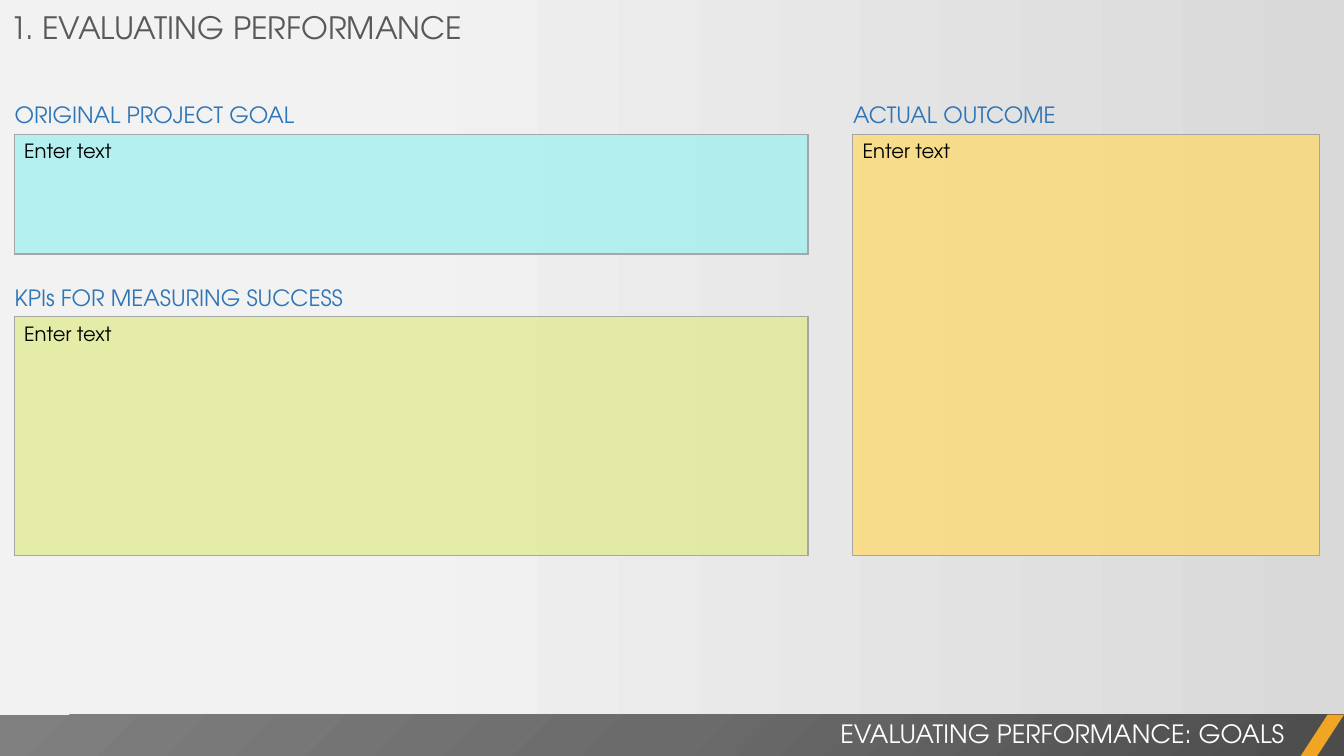
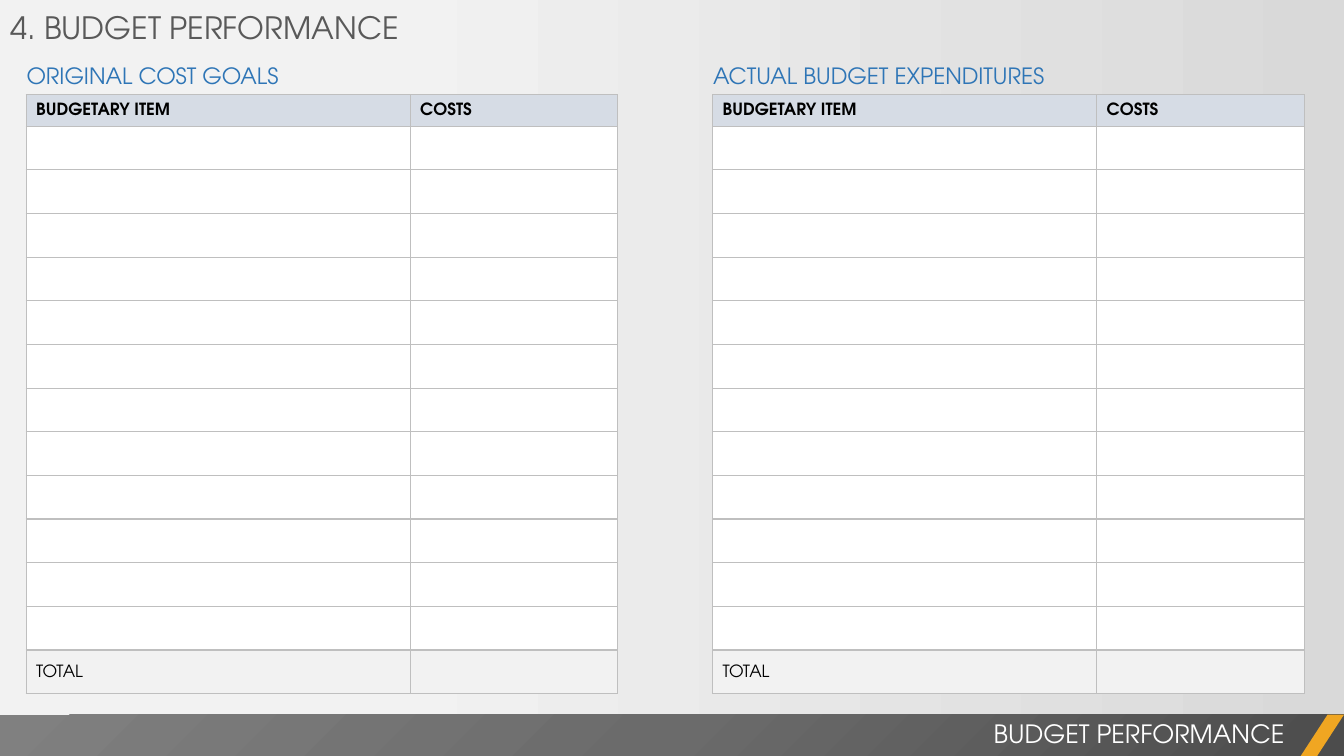
from dataclasses import dataclass

from pptx import Presentation, oxml, util as u
from pptx.dml.color import RGBColor
from pptx.enum import shapes, text
from pptx.oxml import ns
from pptx.util import Cm, Pt


@dataclass(frozen=True)
class Theme:
    font: str = "TeX Gyre Adventor"
    title: str = "595959"
    label: str = "2E75B6"
    body: str = "000000"
    footer: str = "FFFFFF"
    accent: str = "F0A622"
    background: tuple = ((0.28, "F2F2F2"), (1, "D9D9D9"))
    band: tuple = ((0, "4C4C4C"), (50, "6B6B6B"), (100, "808080"))
    panel_border: str = "A6A6A6"
    grid_border: str = "BFBFBF"
    header_row: str = "D6DCE5"
    item_row: str = "FFFFFF"
    total_row: str = "F2F2F2"
    title_size: int = 22
    footer_size: int = 18
    label_size: int = 16
    panel_size: int = 14
    grid_size: int = 12


@dataclass(frozen=True)
class Panel:
    """A labelled one-cell table; lengths in centimetres."""
    label: str
    left: float
    top: float
    width: float
    height: float
    fill: str


@dataclass(frozen=True)
class Budget:
    label: str
    left: float


THEME = Theme()
SLIDE_WIDTH, SLIDE_HEIGHT = Cm(33.87), Cm(19.05)
BAND_TOP = Cm(18.01)
PANEL_OPACITY = 70

PANELS = (
    Panel("ORIGINAL PROJECT GOAL", 0.36, 3.38, 20, 3.02, "9CF0F0"),
    Panel("KPIs FOR MEASURING SUCCESS", 0.36, 7.98, 20, 6.02, "E0EA88"),
    Panel("ACTUAL OUTCOME", 21.49, 3.38, 11.76, 10.62, "FFD966"),
)

BUDGETS = (
    Budget("ORIGINAL COST GOALS", 0.66),
    Budget("ACTUAL BUDGET EXPENDITURES", 17.96),
)
BUDGET_TOP = 2.39
BUDGET_COLUMNS = (9.68, 5.23)
HEADER_HEIGHT, ITEM_HEIGHT, ITEM_COUNT = 0.79, 1.1, 12


def rgb(colour: str) -> RGBColor:
    return RGBColor.from_string(colour)


def write(frame, words: str, size: int, colour: str, bold: bool = False):
    """Fill a text frame with one formatted paragraph and return it."""
    frame.text = words
    paragraph = frame.paragraphs[0]
    for run in paragraph.runs:
        font = run.font
        font.name, font.size, font.bold = THEME.font, Pt(size), bold
        font.color.rgb = rgb(colour)
    return paragraph


def set_background(master) -> None:
    fill = master.background.fill
    fill.gradient()
    fill.gradient_angle = 0
    for stop, (position, colour) in zip(fill.gradient_stops, THEME.background):
        stop.position = position
        stop.color.rgb = rgb(colour)


def add_plain_shape(slide, kind, left: u.Length, width: u.Length):
    """Add a shape without line or shadow that stands on the footer band."""
    shape = slide.shapes.add_shape(kind, left, BAND_TOP, width, SLIDE_HEIGHT - BAND_TOP)
    shape.shadow.inherit = False
    shape.line.fill.background()
    return shape


def add_footer(slide, words: str) -> None:
    band = add_plain_shape(slide, shapes.MSO_SHAPE.RECTANGLE, Cm(0), SLIDE_WIDTH)
    band.fill.gradient()
    stops = "".join(
        f'<a:gs pos="{position * 1000}"><a:srgbClr val="{colour}"/></a:gs>'
        for position, colour in THEME.band
    )
    radial = oxml.parse_xml(
        f'<a:gradFill {ns.nsdecls("a")}><a:gsLst>{stops}</a:gsLst>'
        '<a:path path="circle"><a:fillToRect l="100000" t="100000"/></a:path></a:gradFill>'
    )
    properties = band._element.spPr
    properties.replace(properties.find(ns.qn("a:gradFill")), radial)

    slash_width = Cm(1.09)
    slash = add_plain_shape(
        slide, shapes.MSO_SHAPE.PARALLELOGRAM, SLIDE_WIDTH - slash_width, slash_width
    )
    slash.adjustments[0] = 0.65
    slash.fill.solid()
    slash.fill.fore_color.rgb = rgb(THEME.accent)

    box = slide.shapes.add_textbox(Cm(1.02), Cm(17.98), Cm(31.6), Cm(1.02))
    box.text_frame.word_wrap = True
    paragraph = write(box.text_frame, words, THEME.footer_size, THEME.footer)
    paragraph.alignment = text.PP_ALIGN.RIGHT


def add_slide(presentation, title_words: str, footer_words: str):
    """Add a title-only slide with the shared title style and footer."""
    slide = presentation.slides.add_slide(presentation.slide_layouts[5])
    title = slide.shapes.title
    title.left, title.top, title.width, title.height = Cm(0), Cm(0.1), Cm(20), Cm(1.19)
    frame = title.text_frame
    frame.auto_size = text.MSO_AUTO_SIZE.NONE
    frame.vertical_anchor = text.MSO_ANCHOR.TOP
    paragraph = write(frame, title_words, THEME.title_size, THEME.title)
    paragraph.alignment = text.PP_ALIGN.LEFT
    add_footer(slide, footer_words)
    return slide


def add_label(slide, words: str, left: float, table_top: float) -> None:
    """Write a heading just above a table, in line with its left edge."""
    box = slide.shapes.add_textbox(Cm(left - 0.29), Cm(table_top - 1.06), Cm(14.2), Cm(1.02))
    frame = box.text_frame
    frame.word_wrap = True
    frame.margin_left = frame.margin_right = Cm(0.3)
    frame.margin_top = frame.margin_bottom = Cm(0.15)
    paragraph = write(frame, words, THEME.label_size, THEME.label)
    paragraph.line_spacing = Pt(21.5)


def add_table(slide, left: float, top: float, columns: tuple, rows: tuple):
    """Add an unbanded table from column widths and row heights."""
    table = slide.shapes.add_table(
        len(rows), len(columns), Cm(left), Cm(top), Cm(sum(columns)), Cm(sum(rows))
    ).table
    table.first_row = table.horz_banding = False
    for column, width in zip(table.columns, columns):
        column.width = Cm(width)
    for row, height in zip(table.rows, rows):
        row.height = Cm(height)
    return table


def style_cell(cell, fill: str, border: str, opacity: int = 100) -> None:
    properties = cell._tc.get_or_add_tcPr()
    for side in "LRTB":
        properties.append(oxml.parse_xml(
            f'<a:ln{side} {ns.nsdecls("a")} w="{Pt(1)}"><a:solidFill>'
            f'<a:srgbClr val="{border}"/></a:solidFill></a:ln{side}>'
        ))
    cell.fill.solid()
    cell.fill.fore_color.rgb = rgb(fill)
    if opacity < 100:
        colour = properties.find(f'{ns.qn("a:solidFill")}/{ns.qn("a:srgbClr")}')
        colour.append(oxml.parse_xml(
            f'<a:alpha {ns.nsdecls("a")} val="{opacity * 1000}"/>'
        ))


def add_panel(slide, panel: Panel) -> None:
    table = add_table(slide, panel.left, panel.top, (panel.width,), (panel.height,))
    cell = table.cell(0, 0)
    cell.margin_left = cell.margin_right = Cm(0.25)
    cell.margin_top = cell.margin_bottom = Cm(0.25)
    style_cell(cell, panel.fill, THEME.panel_border, PANEL_OPACITY)
    write(cell.text_frame, "Enter text", THEME.panel_size, THEME.body)
    add_label(slide, panel.label, panel.left, panel.top)


def add_budget(slide, budget: Budget) -> None:
    heights = (HEADER_HEIGHT,) + (ITEM_HEIGHT,) * (ITEM_COUNT + 1)
    fills = (THEME.header_row,) + (THEME.item_row,) * ITEM_COUNT + (THEME.total_row,)
    contents = (("BUDGETARY ITEM", "COSTS"),) + (("", ""),) * ITEM_COUNT + (("TOTAL", ""),)
    table = add_table(slide, budget.left, BUDGET_TOP, BUDGET_COLUMNS, heights)
    for row, fill, row_words in zip(table.rows, fills, contents):
        for cell, words in zip(row.cells, row_words):
            cell.margin_left, cell.margin_right = Cm(0.25), Cm(0.15)
            cell.margin_top = cell.margin_bottom = Cm(0)
            cell.vertical_anchor = text.MSO_ANCHOR.MIDDLE
            style_cell(cell, fill, THEME.grid_border)
            if words:
                paragraph = write(cell.text_frame, words, THEME.grid_size, THEME.body,
                                  bold=fill == THEME.header_row)
                paragraph.line_spacing = 1.07
    add_label(slide, budget.label, budget.left, BUDGET_TOP)


def main() -> None:
    presentation = Presentation()
    presentation.slide_width, presentation.slide_height = SLIDE_WIDTH, SLIDE_HEIGHT
    set_background(presentation.slide_master)

    goals = add_slide(presentation, "1. EVALUATING PERFORMANCE", "EVALUATING PERFORMANCE: GOALS")
    for panel in PANELS:
        add_panel(goals, panel)

    costs = add_slide(presentation, "4. BUDGET PERFORMANCE", "BUDGET PERFORMANCE")
    for budget in BUDGETS:
        add_budget(costs, budget)

    presentation.save("out.pptx")


if __name__ == "__main__":
    main()
